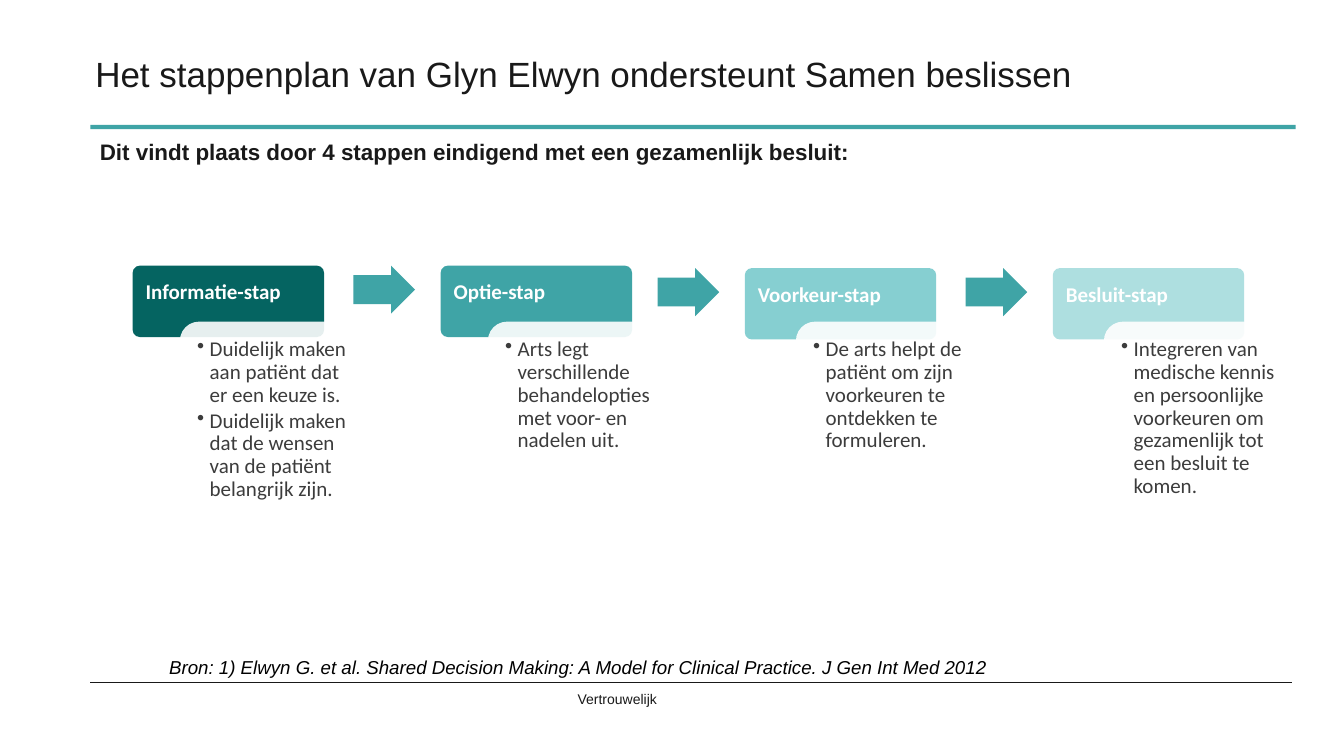
from lxml.etree import SubElement
from pptx import Presentation
from pptx.dml.color import RGBColor
from pptx.enum.shapes import MSO_CONNECTOR, MSO_SHAPE
from pptx.enum.text import MSO_ANCHOR
from pptx.oxml.ns import qn
from pptx.util import Pt

TEAL = RGBColor(0x3F, 0xA4, 0xA6)
DARK_TEAL = RGBColor(0x05, 0x64, 0x61)
LIGHT_TEAL = RGBColor(0x86, 0xCF, 0xD1)
PALE_TEAL = RGBColor(0xAE, 0xDF, 0xE0)
WHITE = RGBColor(0xFF, 0xFF, 0xFF)
BLACK = RGBColor(0, 0, 0)
INK = RGBColor(0x19, 0x19, 0x19)
GREY = RGBColor(0x3C, 0x3C, 0x3C)

deck = Presentation()
deck.slide_width, deck.slide_height = Pt(1920), Pt(1080)
page = deck.slides.add_slide(deck.slide_layouts[6])


def add_block(kind, left, top, width, height, color, adjustments=()):
    block = page.shapes.add_shape(kind, Pt(left), Pt(top), Pt(width), Pt(height))
    block.shadow.inherit = False
    block.fill.solid()
    block.fill.fore_color.rgb = color
    block.line.fill.background()
    for index, value in enumerate(adjustments):
        block.adjustments[index] = value
    return block


def add_text(left, top, width, height, lines, font, frame_format, bullet=False):
    box = page.shapes.add_textbox(Pt(left), Pt(top), Pt(width), Pt(height))
    frame = box.text_frame
    for name, value in frame_format.items():
        setattr(frame, name, value)
    for index, line in enumerate(lines):
        para = frame.add_paragraph() if index else frame.paragraphs[0]
        if bullet:
            para.line_spacing = 0.9
            para.space_after = Pt(4.5)
            properties = para._p.get_or_add_pPr()
            properties.set("marL", str(Pt(18)))
            properties.set("indent", str(Pt(-18)))
            SubElement(properties, qn("a:buChar"), char="•")
        span = para.add_run()
        span.text = line
        for name, value in font.items():
            if name == "color":
                span.font.color.rgb = value
            else:
                setattr(span.font, name, value)


wrapped = {"word_wrap": True}
unwrapped = {"word_wrap": False}
inset = {"word_wrap": True, "margin_left": Pt(16.56), "margin_right": Pt(16.56),
         "margin_top": Pt(16.56), "margin_bottom": Pt(8.64)}
title_font = {"name": "Arial", "size": Pt(50), "color": INK}
subtitle_font = {"name": "Arial", "size": Pt(32), "bold": True, "color": INK}
source_font = {"name": "Arial", "size": Pt(26.7), "italic": True, "color": BLACK}
footer_font = {"name": "Arial", "size": Pt(20), "color": INK}
step_font = {"name": "Calibri", "size": Pt(30), "bold": True, "color": WHITE}
detail_font = {"name": "Calibri", "size": Pt(30), "color": GREY}

add_block(MSO_SHAPE.RECTANGLE, 129, 178.5, 1722, 6, TEAL)
add_text(129, 41, 1718, 128, ["Het stappenplan van Glyn Elwyn ondersteunt Samen beslissen"],
         title_font, {"word_wrap": True, "vertical_anchor": MSO_ANCHOR.MIDDLE})
add_text(135.5, 193.5, 1315.5, 46,
         ["Dit vindt plaats door 4 stappen eindigend met een gezamenlijk besluit:"],
         subtitle_font, wrapped)
add_text(234.5, 933, 1192.5, 39.5,
         ["Bron: 1) Elwyn G. et al. Shared Decision Making: A Model for Clinical Practice. "
          "J Gen Int Med 2012"], source_font, unwrapped)

steps = [
    ("Informatie-stap", 189.5, 379.5, DARK_TEAL,
     ["Duidelijk maken aan patiënt dat er een keuze is.",
      "Duidelijk maken dat de wensen van de patiënt belangrijk zijn."]),
    ("Optie-stap", 629.5, 379.5, TEAL,
     ["Arts legt verschillende behandelopties met voor- en nadelen uit."]),
    ("Voorkeur-stap", 1064, 383, LIGHT_TEAL,
     ["De arts helpt de patiënt om zijn voorkeuren te ontdekken te formuleren."]),
    ("Besluit-stap", 1504, 383, PALE_TEAL,
     ["Integreren van medische kennis en persoonlijke voorkeuren om gezamenlijk "
      "tot een besluit te komen."]),
]
for number, (name, left, top, color, details) in enumerate(steps):
    if number:
        add_block(MSO_SHAPE.RIGHT_ARROW, left - 124.5, top, 88, 68.5, TEAL, (0.6, 0.5))
    add_block(MSO_SHAPE.ROUNDED_RECTANGLE, left, top, 273.5, 102, color, (0.1,))
    add_text(left + 2, top + 2, 270, 64, [name], step_font, inset)

    card_left = 257 + 440 * number
    card = add_block(MSO_SHAPE.ROUNDED_RECTANGLE, card_left, 459.5, 273.5, 289.5, WHITE, (0.1,))
    fill_color = card.fill._xPr.find(qn("a:solidFill"))[0]
    SubElement(fill_color, qn("a:alpha"), val="90000")
    add_text(card_left + 8, 467.5, 258, 273, details, detail_font, inset, bullet=True)

rule = page.shapes.add_connector(MSO_CONNECTOR.STRAIGHT, Pt(129), Pt(975), Pt(1846), Pt(975))
rule.line.color.rgb = INK
rule.line.width = Pt(1)
SubElement(rule._element.spPr, qn("a:effectLst"))
add_text(818, 983.5, 130.5, 31.5, ["Vertrouwelijk"], footer_font, unwrapped)

deck.save("out.pptx")
